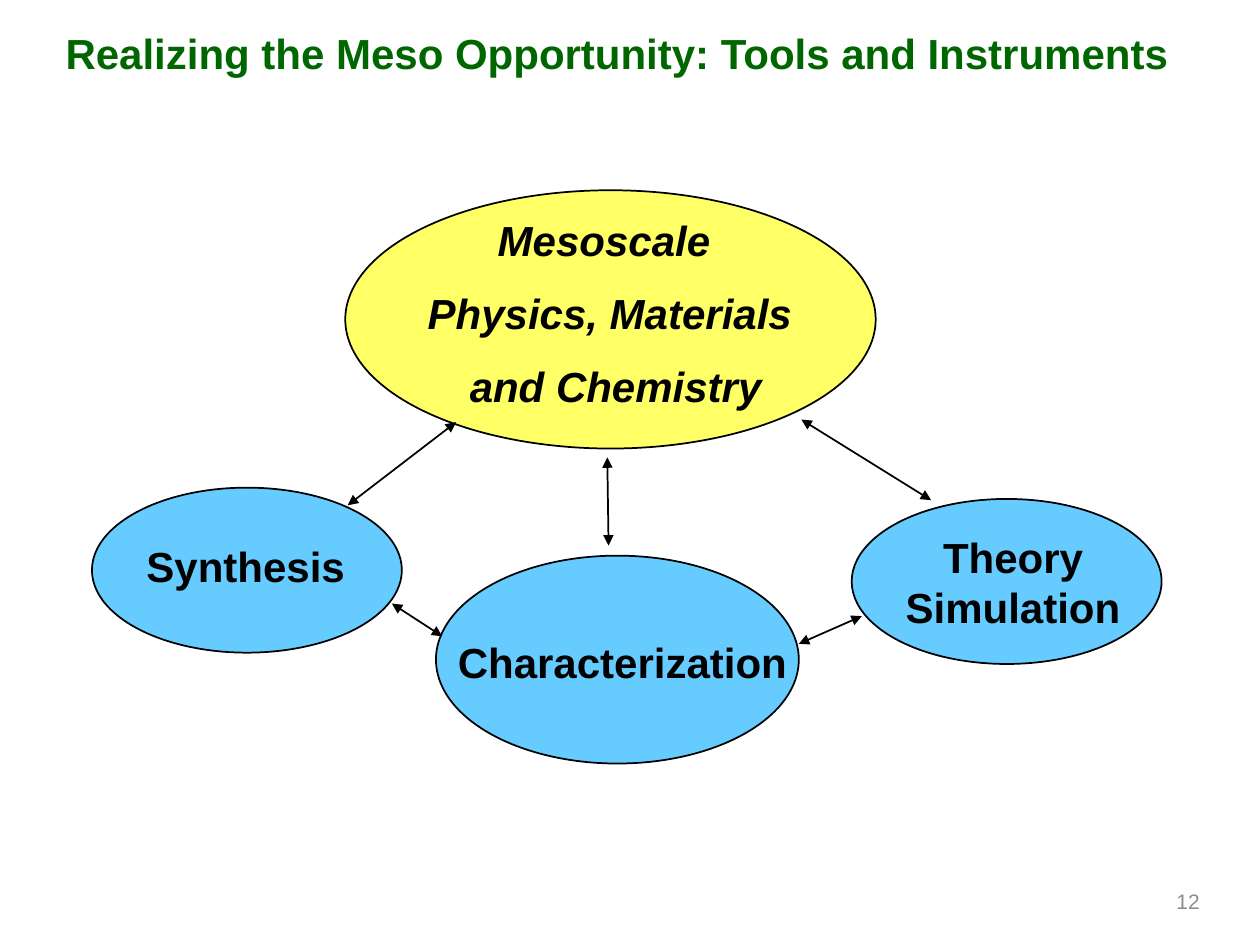
"""Build a slide on the tools and instruments behind mesoscale science."""
from dataclasses import dataclass

from lxml.etree import SubElement
from pptx import Presentation
from pptx.dml.color import RGBColor
from pptx.enum.shapes import MSO_CONNECTOR, MSO_SHAPE
from pptx.enum.text import MSO_ANCHOR, PP_ALIGN
from pptx.oxml.ns import qn
from pptx.util import Inches, Pt


@dataclass(frozen=True)
class Theme:
    font: str = "Arial"
    title: RGBColor = RGBColor(0x00, 0x66, 0x00)
    ink: RGBColor = RGBColor(0x00, 0x00, 0x00)
    goal: RGBColor = RGBColor(0xFF, 0xFF, 0x66)
    tool: RGBColor = RGBColor(0x66, 0xCC, 0xFF)
    number: RGBColor = RGBColor(0x8C, 0x8C, 0x8C)
    body_size: Pt = Pt(24)
    number_size: Pt = Pt(12)
    paragraph_gap: Pt = Pt(13)
    line_width: Pt = Pt(1)


theme = Theme()


def write(box, lines, color, size, align, gap=Pt(0), bold=True, italic=False, wrap=True):
    frame = box.text_frame
    frame.word_wrap = wrap
    frame.vertical_anchor = MSO_ANCHOR.MIDDLE
    for index, line in enumerate(lines):
        para = frame.add_paragraph() if index else frame.paragraphs[0]
        para.alignment = align
        para.space_before = gap if index else Pt(0)
        span = para.add_run()
        span.text = line
        span.font.name = theme.font
        span.font.size = size
        span.font.bold = bold
        span.font.italic = italic
        span.font.color.rgb = color


deck = Presentation()
deck.slide_width, deck.slide_height = Inches(10), Inches(7.5)
page = deck.slides.add_slide(deck.slide_layouts[5])

title = page.shapes.title
title.left, title.top, title.width, title.height = map(Inches, (0.42, 0.17, 9.01, 0.5))
write(title, ["Realizing the Meso Opportunity: Tools and Instruments"],
      theme.title, theme.body_size, PP_ALIGN.LEFT)

topics = [
    (["Synthesis"], (0.73, 3.87, 2.46, 1.31), (1.06, 4.24, 1.78, 0.5), theme.tool, Pt(0), False),
    (["Characterization"], (3.46, 4.41, 2.88, 1.65), (3.21, 4.94, 3.46, 0.63), theme.tool, Pt(0), False),
    (["Theory", "Simulation"], (6.76, 3.96, 2.46, 1.31), (7.08, 4.16, 1.92, 0.91), theme.tool, Pt(0), False),
    (["Mesoscale ", "Physics, Materials", " and Chemistry"],
     (2.74, 1.51, 4.21, 2.05), (3.24, 1.62, 3.2, 1.72), theme.goal, theme.paragraph_gap, True),
]
for lines, oval_area, label_area, fill, gap, italic in topics:
    oval = page.shapes.add_shape(MSO_SHAPE.OVAL, *map(Inches, oval_area))
    oval.shadow.inherit = False
    oval.fill.solid()
    oval.fill.fore_color.rgb = fill
    oval.line.color.rgb = theme.ink
    oval.line.width = theme.line_width
    label = page.shapes.add_textbox(*map(Inches, label_area))
    write(label, lines, theme.ink, theme.body_size, PP_ALIGN.CENTER, gap, italic=italic, wrap=False)

arrows = [
    (3.62, 3.35, 2.76, 4.01),
    (6.36, 3.33, 7.39, 3.97),
    (4.82, 3.63, 4.83, 4.33),
    (3.11, 4.79, 3.51, 5.05),
    (6.84, 4.89, 6.34, 5.11),
]
for ends in arrows:
    arrow = page.shapes.add_connector(MSO_CONNECTOR.STRAIGHT, *map(Inches, ends))
    arrow.line.color.rgb = theme.ink
    arrow.line.width = theme.line_width
    outline = arrow.line._get_or_add_ln()
    for tip in ("a:headEnd", "a:tailEnd"):
        SubElement(outline, qn(tip), type="triangle")
    SubElement(arrow._element.spPr, qn("a:effectLst"))

number = page.shapes.add_textbox(*map(Inches, (9.2, 6.95, 0.42, 0.4)))
write(number, ["12"], theme.number, theme.number_size, PP_ALIGN.RIGHT, bold=False)

deck.save("out.pptx")
